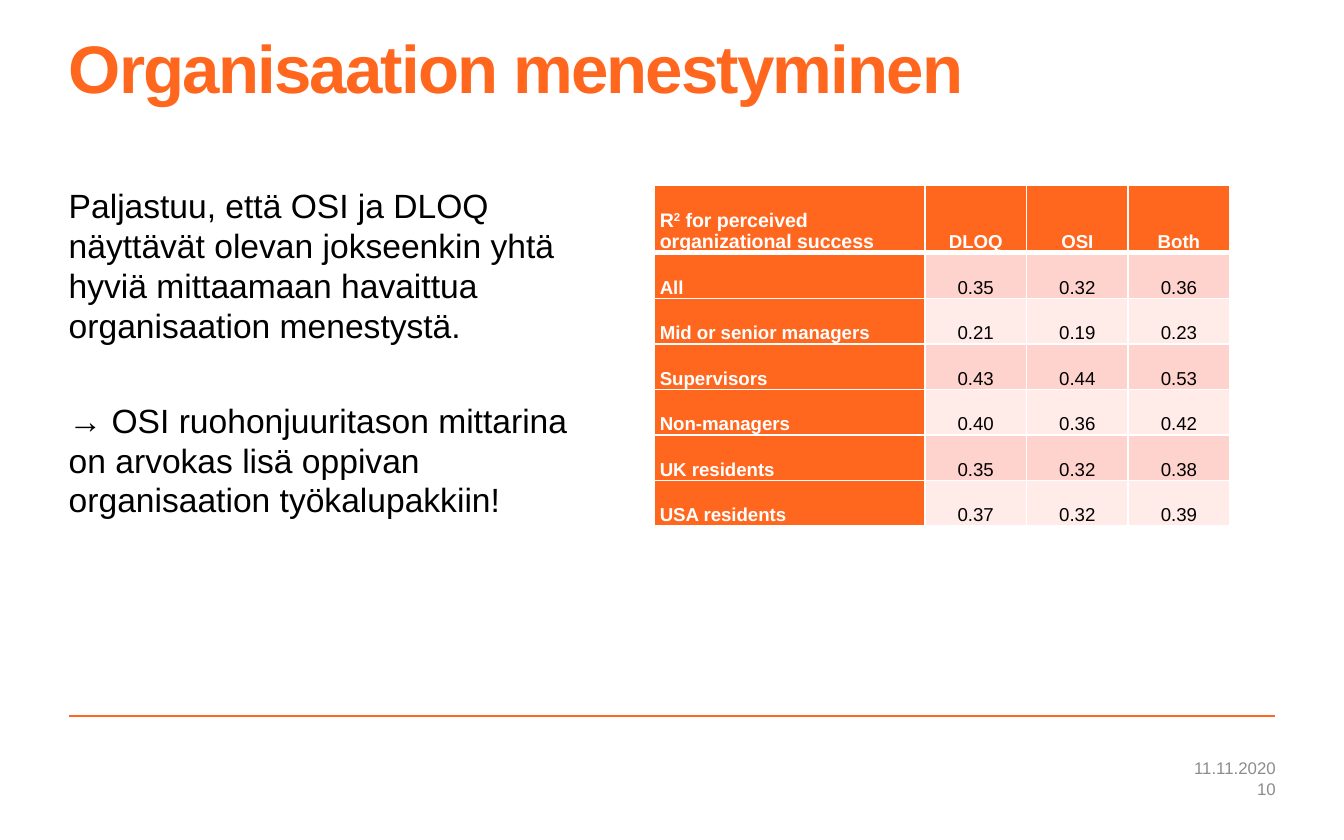
import dataclasses

import lxml.etree
import pptx
import pptx.dml.color
import pptx.enum.shapes
import pptx.enum.text
import pptx.oxml.ns
import pptx.util

Cm = pptx.util.Cm
Pt = pptx.util.Pt
qn = pptx.oxml.ns.qn
Align = pptx.enum.text.PP_ALIGN
Anchor = pptx.enum.text.MSO_ANCHOR


@dataclasses.dataclass(frozen=True)
class Theme:
    font: str = "Arial"
    accent: str = "FF671F"
    text: str = "000000"
    inverse: str = "FFFFFF"
    muted: str = "8C8C8C"
    bands: tuple = ("FFD3CD", "FFEBE8")
    title_size: float = 36
    body_size: float = 18
    header_size: float = 10.5
    cell_size: float = 10
    footer_size: float = 9


theme = Theme()


def style(para, size, color, bold=False, align=Align.LEFT):
    para.alignment = align
    para.font.name = theme.font
    para.font.size = Pt(size)
    para.font.bold = bold
    para.font.color.rgb = pptx.dml.color.RGBColor.from_string(color)


def add_border(cell, side, width):
    properties = cell._tc.get_or_add_tcPr()
    border = lxml.etree.SubElement(properties, qn(f"a:{side}"), w=str(Pt(width)))
    fill = lxml.etree.SubElement(border, qn("a:solidFill"))
    lxml.etree.SubElement(fill, qn("a:srgbClr"), val=theme.inverse)


deck = pptx.Presentation()
deck.slide_width = Cm(25.4)
deck.slide_height = Cm(15.88)
page = deck.slides.add_slide(deck.slide_layouts[5])

rule = page.shapes.add_connector(
    pptx.enum.shapes.MSO_CONNECTOR.STRAIGHT, Cm(1.3), Cm(13.54), Cm(24.1), Cm(13.54)
)
rule.line.color.rgb = pptx.dml.color.RGBColor.from_string(theme.accent)
rule.line.width = Pt(1)
lxml.etree.SubElement(rule._element.spPr, qn("a:effectLst"))

title = page.shapes.title
title.left, title.top, title.width, title.height = Cm(1.3), Cm(0.74), Cm(22.8), Cm(2.77)
frame = title.text_frame
frame.margin_left = frame.margin_top = frame.margin_right = frame.margin_bottom = 0
frame.vertical_anchor = Anchor.TOP
frame.word_wrap = True
para = frame.paragraphs[0]
span = para.add_run()
span.text = "Organisaation menestyminen"
span._r.get_or_add_rPr().set("spc", "-100")
para.line_spacing = 0.85
style(para, theme.title_size, theme.accent, bold=True)

findings = [
    "Paljastuu, että OSI ja DLOQ näyttävät olevan jokseenkin yhtä hyviä "
    "mittaamaan havaittua organisaation menestystä.",
    "→ OSI ruohonjuuritason mittarina on arvokas lisä oppivan "
    "organisaation työkalupakkiin!",
]
box = page.shapes.add_textbox(Cm(1.3), Cm(3.5), Cm(10.24), Cm(9.27))
frame = box.text_frame
frame.margin_left = frame.margin_top = frame.margin_right = frame.margin_bottom = 0
frame.word_wrap = True
for index, finding in enumerate(findings):
    para = frame.paragraphs[0] if index == 0 else frame.add_paragraph()
    para.text = finding
    para.line_spacing = Pt(21.4)
    para.space_before = Pt(29.5 if index else 0)
    style(para, theme.body_size, theme.text)

rows = [
    ("", "DLOQ", "OSI", "Both"),
    ("All", "0.35", "0.32", "0.36"),
    ("Mid or senior managers", "0.21", "0.19", "0.23"),
    ("Supervisors", "0.43", "0.44", "0.53"),
    ("Non-managers", "0.40", "0.36", "0.42"),
    ("UK residents", "0.35", "0.32", "0.38"),
    ("USA residents", "0.37", "0.32", "0.39"),
]
widths = [5.11, 1.92, 1.92, 1.92]
heights = [1.28] + [0.86] * 6
table = page.shapes.add_table(
    len(rows), len(widths), Cm(12.37), Cm(3.5), Cm(sum(widths)), Cm(sum(heights))
).table
for column, width in zip(table.columns, widths):
    column.width = Cm(width)
for row, height in zip(table.rows, heights):
    row.height = Cm(height)

for row_index, row in enumerate(rows):
    for column_index, value in enumerate(row):
        cell = table.cell(row_index, column_index)
        is_header = row_index == 0 or column_index == 0
        is_corner = row_index == 0 and column_index == 0
        cell.margin_left = cell.margin_right = Cm(0.1)
        cell.margin_top = cell.margin_bottom = 0
        cell.vertical_anchor = Anchor.BOTTOM
        for side in ("lnL", "lnR", "lnT", "lnB"):
            below_header = (row_index, side) in ((0, "lnB"), (1, "lnT"))
            add_border(cell, side, 3 if below_header else 1)
        cell.fill.solid()
        cell.fill.fore_color.rgb = pptx.dml.color.RGBColor.from_string(
            theme.accent if is_header else theme.bands[(row_index - 1) % 2]
        )
        para = cell.text_frame.paragraphs[0]
        if is_corner:
            for text in ("R", "2", " for perceived organizational success"):
                span = para.add_run()
                span.text = text
                if text == "2":
                    span._r.get_or_add_rPr().set("baseline", "30000")
        else:
            para.text = value
        style(
            para,
            theme.header_size if is_corner else theme.cell_size,
            theme.inverse if is_header else theme.text,
            bold=is_header,
            align=Align.CENTER if column_index else Align.LEFT,
        )

for text, top, height in (("11.11.2020", 14.3, 0.43), ("10", 14.73, 0.38)):
    box = page.shapes.add_textbox(Cm(14.05), Cm(top), Cm(10.06), Cm(height))
    frame = box.text_frame
    frame.margin_right = 0
    frame.word_wrap = True
    frame.vertical_anchor = Anchor.MIDDLE
    para = frame.paragraphs[0]
    para.text = text
    style(para, theme.footer_size, theme.muted, align=Align.RIGHT)

deck.save("out.pptx")
